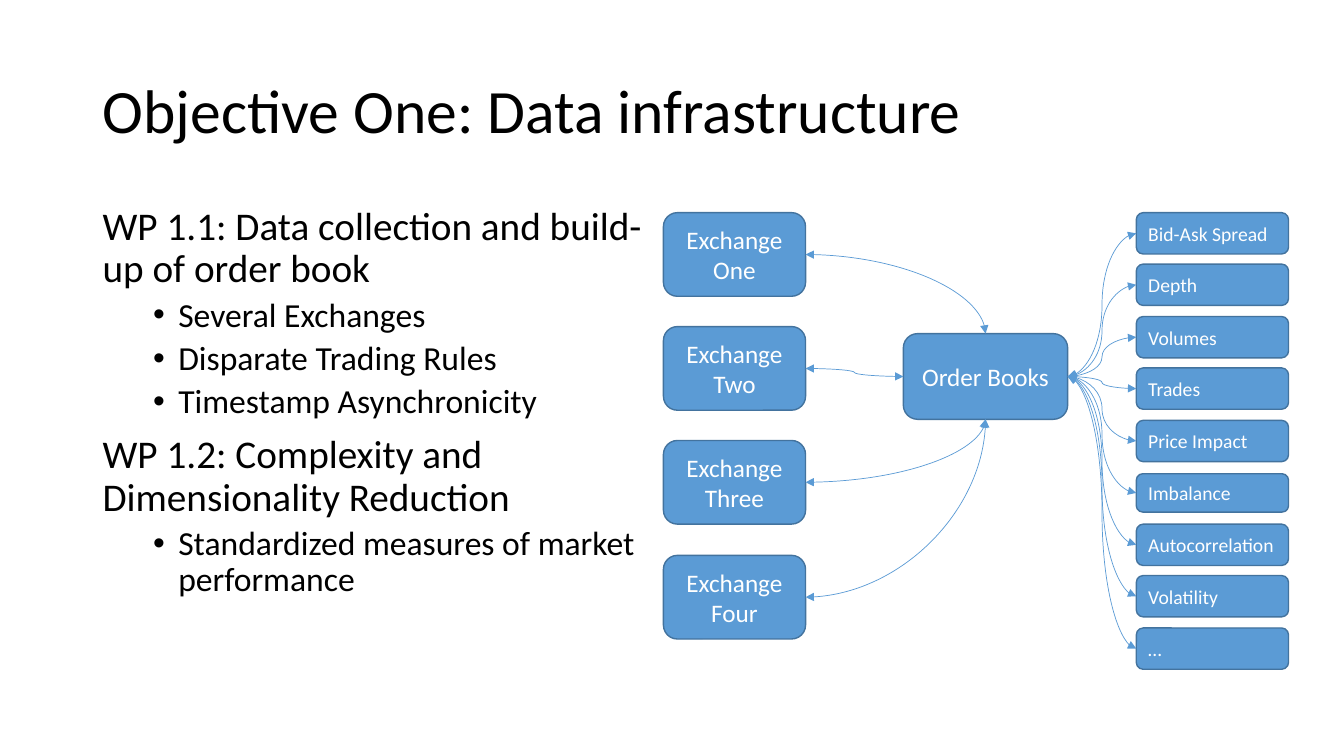
"""Build the data infrastructure slide: work packages beside an order book diagram."""
from dataclasses import dataclass
from typing import Optional

from lxml import etree
from pptx import Presentation
from pptx.dml.color import RGBColor
from pptx.enum.shapes import MSO_CONNECTOR, MSO_SHAPE
from pptx.enum.text import MSO_ANCHOR, MSO_AUTO_SIZE, PP_ALIGN
from pptx.oxml.ns import qn
from pptx.util import Emu, Pt

EMU_PER_PX = 9144
ROUNDED = MSO_SHAPE.ROUNDED_RECTANGLE
CURVE = MSO_CONNECTOR.CURVE
TOP, MIDDLE = MSO_ANCHOR.TOP, MSO_ANCHOR.MIDDLE
LEFT, CENTER = PP_ALIGN.LEFT, PP_ALIGN.CENTER
NO_AUTOFIT = MSO_AUTO_SIZE.NONE
TOP_SITE, LEFT_SITE, BOTTOM_SITE, RIGHT_SITE = range(4)


@dataclass(frozen=True)
class Theme:
    font: str = "Calibri"
    ink: RGBColor = RGBColor(0, 0, 0)
    box_ink: RGBColor = RGBColor(0xFF, 0xFF, 0xFF)
    box_fill: RGBColor = RGBColor(0x5B, 0x9B, 0xD5)
    box_edge: RGBColor = RGBColor(0x43, 0x73, 0x9E)
    title_size: int = 44
    package_size: int = 28
    task_size: int = 24
    node_size: int = 18
    measure_size: int = 14
    edge_width: float = 1
    link_width: float = 0.5


@dataclass(frozen=True)
class Box:
    left: int
    top: int
    width: int
    height: int


@dataclass(frozen=True)
class Measure:
    label: str
    height: int = 41


@dataclass(frozen=True)
class WorkPackage:
    heading: str
    tasks: tuple[str, ...]


THEME = Theme()
TITLE_BOX = Box(92, 40, 1150, 145)
PACKAGES_BOX = Box(92, 200, 567, 476)
ORDER_BOOKS_BOX = Box(896, 331, 163, 85)
DIAGRAM_TOP = 211
EXCHANGE_SPAN, MEASURE_SPAN = 340, 412
MEASURE_ROW = 41
TASK_INDENT, BULLET_HANG = 75, 25

PACKAGES = (
    WorkPackage(
        "WP 1.1: Data collection and build-up of order book",
        ("Several Exchanges", "Disparate Trading Rules", "Timestamp Asynchronicity"),
    ),
    WorkPackage(
        "WP 1.2: Complexity and Dimensionality Reduction",
        ("Standardized measures of market performance",),
    ),
)
EXCHANGES = (
    ("Exchange One", TOP_SITE),
    ("Exchange Two", LEFT_SITE),
    ("Exchange Three", BOTTOM_SITE),
    ("Exchange Four", BOTTOM_SITE),
)
MEASURES = (
    Measure("Bid-Ask Spread"),
    Measure("Depth"),
    Measure("Volumes"),
    Measure("Trades"),
    Measure("Price Impact"),
    Measure("Imbalance", height=38),
    Measure("Autocorrelation"),
    Measure("Volatility"),
    Measure("…"),
)


def px(length: int) -> Emu:
    """Turn a length in px into EMU."""
    return Emu(length * EMU_PER_PX)


def frame(box: Box) -> tuple[Emu, Emu, Emu, Emu]:
    """Give the four lengths of a box in EMU."""
    return px(box.left), px(box.top), px(box.width), px(box.height)


def row_top(index: int, count: int, span: int) -> int:
    """Place a row by equal steps over the span from first to last."""
    return DIAGRAM_TOP + index * span // (count - 1)


def write(text_frame, text: str, *, size: int, color: RGBColor = THEME.ink,
          align=LEFT, anchor=MIDDLE, spacing: Optional[float] = None,
          before: int = 0, bullet: bool = False, append: bool = False) -> None:
    """Write one formatted paragraph into a text frame."""
    text_frame.word_wrap = True
    text_frame.auto_size = NO_AUTOFIT
    text_frame.vertical_anchor = anchor
    paragraph = text_frame.add_paragraph() if append else text_frame.paragraphs[0]
    paragraph.alignment = align
    paragraph.line_spacing = spacing
    paragraph.space_before = Pt(before)
    if bullet:
        paragraph.level = 1
        properties = paragraph._p.get_or_add_pPr()
        properties.set("marL", str(px(TASK_INDENT)))
        properties.set("indent", str(-px(BULLET_HANG)))
        etree.SubElement(properties, qn("a:buFont")).set("typeface", "Arial")
        etree.SubElement(properties, qn("a:buChar")).set("char", "•")
    run = paragraph.add_run()
    run.text = text
    run.font.name = THEME.font
    run.font.size = Pt(size)
    run.font.color.rgb = color


def add_node(slide, box: Box, label: str, size: int = THEME.node_size, align=CENTER):
    """Draw one labelled rounded box."""
    node = slide.shapes.add_shape(ROUNDED, *frame(box))
    node.shadow.inherit = False
    node.fill.solid()
    node.fill.fore_color.rgb = THEME.box_fill
    node.line.color.rgb = THEME.box_edge
    node.line.width = Pt(THEME.edge_width)
    write(node.text_frame, label, size=size, color=THEME.box_ink, align=align)
    return node


def add_link(slide, source, target, target_site: int) -> None:
    """Join the right side of a box to a site of another by a two-headed curve."""
    link = slide.shapes.add_connector(CURVE, 0, 0, 0, 0)
    link.begin_connect(source, RIGHT_SITE)
    link.end_connect(target, target_site)
    link.line.color.rgb = THEME.box_fill
    link.line.width = Pt(THEME.link_width)
    properties = link._element.spPr
    if target_site != LEFT_SITE:
        properties.find(qn("a:prstGeom")).set("prst", "curvedConnector2")
    outline = properties.find(qn("a:ln"))
    for end in ("a:headEnd", "a:tailEnd"):
        etree.SubElement(outline, qn(end)).set("type", "triangle")
    etree.SubElement(properties, qn("a:effectLst"))


def add_title(slide, text: str) -> None:
    """Move and fill the title placeholder."""
    title = slide.shapes.title
    title.left, title.top, title.width, title.height = frame(TITLE_BOX)
    write(title.text_frame, text, size=THEME.title_size, spacing=0.9)


def add_packages(slide) -> None:
    """List the work packages with their tasks."""
    listing = slide.shapes.add_textbox(*frame(PACKAGES_BOX)).text_frame
    for index, package in enumerate(PACKAGES):
        write(listing, package.heading, size=THEME.package_size, anchor=TOP,
              spacing=0.9, before=10, append=index > 0)
        for task in package.tasks:
            write(listing, task, size=THEME.task_size, anchor=TOP,
                  spacing=0.9, before=5, bullet=True, append=True)


def add_diagram(slide) -> None:
    """Draw exchanges, order books and measures with their links."""
    order_books = add_node(slide, ORDER_BOOKS_BOX, "Order Books")
    for index, (label, site) in enumerate(EXCHANGES):
        top = row_top(index, len(EXCHANGES), EXCHANGE_SPAN)
        exchange = add_node(slide, Box(658, top, 141, 83), label)
        add_link(slide, exchange, order_books, site)
    for index, measure in enumerate(MEASURES):
        top = row_top(index, len(MEASURES), MEASURE_SPAN)
        top += (MEASURE_ROW - measure.height + 1) // 2
        box = Box(1127, top, 151, measure.height)
        result = add_node(slide, box, measure.label, THEME.measure_size, LEFT)
        add_link(slide, order_books, result, LEFT_SITE)


def main() -> None:
    """Build and save the slide."""
    deck = Presentation()
    deck.slide_width, deck.slide_height = px(1333), px(750)
    slide = deck.slides.add_slide(deck.slide_layouts[5])
    add_title(slide, "Objective One: Data infrastructure")
    add_packages(slide)
    add_diagram(slide)
    deck.save("out.pptx")


if __name__ == "__main__":
    main()
